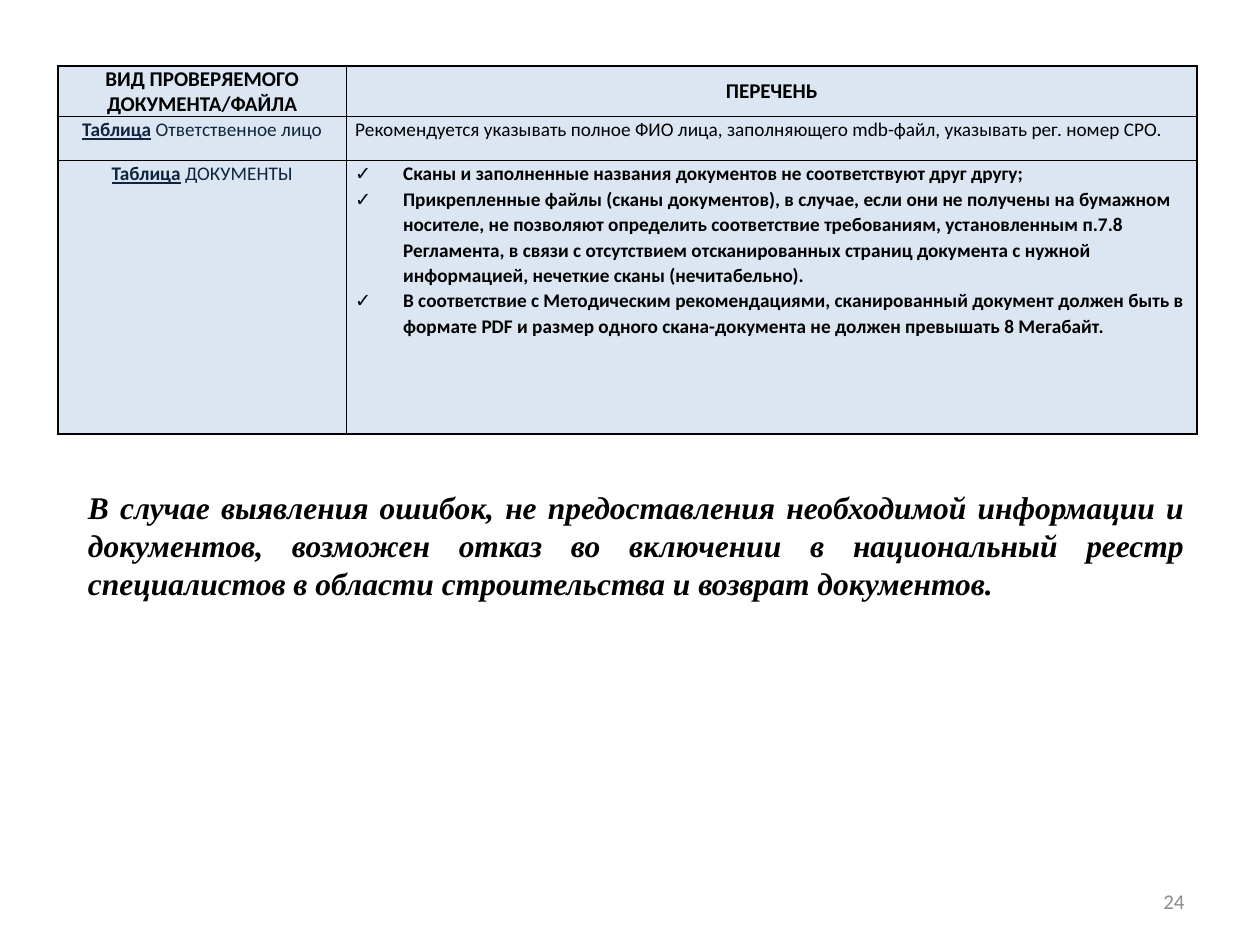
from dataclasses import dataclass

from lxml.etree import SubElement
from pptx import Presentation
from pptx.dml.color import RGBColor
from pptx.enum.text import MSO_ANCHOR as Anchor, PP_ALIGN as Align
from pptx.oxml.ns import qn
from pptx.util import Inches, Pt

BLACK, NAVY, GREY, PALE = "000000", "0F243E", "8C8C8C", "DCE6F2"
SLIDE_W, SLIDE_H = 10, 7.5
COLUMNS = (2.29, 6.75)
ROWS = (0.4, 0.35, 2.17)
BULLET_INDENT = 0.38


@dataclass(frozen=True)
class Run:
    text: str
    size: float = 11
    color: str = BLACK
    bold: bool = False
    italic: bool = False
    underline: bool = False
    font: str = "Calibri"


@dataclass(frozen=True)
class Para:
    runs: tuple[Run, ...]
    align: Align = Align.LEFT
    spacing: float = 1.07
    bullet: str = ""


@dataclass(frozen=True)
class Cell:
    paras: tuple[Para, ...]
    anchor: Anchor = Anchor.TOP
    side_margin: float = 0.07


def rgb(color: str) -> RGBColor:
    return RGBColor.from_string(color)


def add_bullet(p, char: str) -> None:
    pPr = p._p.get_or_add_pPr()
    pPr.set("marL", str(Inches(BULLET_INDENT)))
    pPr.set("indent", str(-Inches(BULLET_INDENT)))
    SubElement(pPr, qn("a:buFont"), typeface="Wingdings" if char == "ü" else "Calibri")
    SubElement(pPr, qn("a:buChar"), char=char)


def write(tf, paras: tuple[Para, ...]) -> None:
    tf.word_wrap = True
    for i, para in enumerate(paras):
        p = tf.paragraphs[0] if i == 0 else tf.add_paragraph()
        p.alignment = para.align
        p.line_spacing = para.spacing
        if para.bullet:
            add_bullet(p, para.bullet)
        for run in para.runs:
            r = p.add_run()
            r.text = run.text
            font = r.font
            font.name, font.size = run.font, Pt(run.size)
            font.bold, font.italic, font.underline = run.bold, run.italic, run.underline
            font.color.rgb = rgb(run.color)


def add_text(slide, left: float, top: float, width: float, height: float,
             para: Para, anchor: Anchor = Anchor.TOP) -> None:
    """Place one paragraph; lengths are shares of the slide's size."""
    box = slide.shapes.add_textbox(
        Inches(left * SLIDE_W), Inches(top * SLIDE_H),
        Inches(width * SLIDE_W), Inches(height * SLIDE_H))
    box.text_frame.vertical_anchor = anchor
    write(box.text_frame, (para,))


def add_borders(cell, color: str, width: float) -> None:
    tcPr = cell._tc.get_or_add_tcPr()
    for side in ("lnL", "lnR", "lnT", "lnB"):
        ln = SubElement(tcPr, qn(f"a:{side}"), w=str(Pt(width)))
        fill = SubElement(ln, qn("a:solidFill"))
        SubElement(fill, qn("a:srgbClr"), val=color)


def fill_cell(cell, content: Cell) -> None:
    cell.margin_left = cell.margin_right = Inches(content.side_margin)
    cell.margin_top = cell.margin_bottom = 0
    cell.vertical_anchor = content.anchor
    add_borders(cell, BLACK, 1)
    cell.fill.solid()
    cell.fill.fore_color.rgb = rgb(PALE)
    write(cell.text_frame, content.paras)


def add_grid(slide, left: float, top: float, cells: list[list[Cell]]) -> None:
    table = slide.shapes.add_table(
        len(ROWS), len(COLUMNS), Inches(left * SLIDE_W), Inches(top * SLIDE_H),
        Inches(sum(COLUMNS)), Inches(sum(ROWS))).table
    table.first_row = table.horz_banding = False
    for column, width in zip(table.columns, COLUMNS):
        column.width = Inches(width)
    for row, height, contents in zip(table.rows, ROWS, cells):
        row.height = Inches(height)
        for cell, content in zip(row.cells, contents):
            fill_cell(cell, content)


def header(text: str) -> Cell:
    para = Para((Run(text, 12, bold=True),), Align.CENTER, 1.0)
    return Cell((para,), Anchor.MIDDLE, 0)


def table_name(name: str) -> Cell:
    runs = (Run("Таблица", color=NAVY, bold=True, underline=True),
            Run(" ", color=NAVY, bold=True), Run(name, color=NAVY))
    return Cell((Para(runs, Align.CENTER),))


REMARKS = (
    "Сканы и заполненные названия документов не соответствуют друг другу;",
    "Прикрепленные файлы (сканы документов), в случае, если они не получены на бумажном "
    "носителе, не позволяют определить соответствие требованиям, установленным п.7.8 "
    "Регламента, в связи с отсутствием отсканированных страниц документа с нужной "
    "информацией, нечеткие сканы (нечитабельно).",
    "В соответствие с Методическим рекомендациями, сканированный документ должен быть в "
    "формате PDF и размер одного скана-документа не должен превышать 8 Мегабайт.",
)
ADVICE = ("Рекомендуется указывать полное ФИО лица, заполняющего mdb-файл, "
          "указывать рег. номер СРО.")
WARNING = ("В случае выявления ошибок, не предоставления необходимой информации и "
           "документов, возможен отказ во включении в национальный реестр специалистов "
           "в области строительства и возврат документов.")
CELLS = [
    [header("ВИД ПРОВЕРЯЕМОГО ДОКУМЕНТА/ФАЙЛА"), header("ПЕРЕЧЕНЬ")],
    [table_name("Ответственное лицо"), Cell((Para((Run(ADVICE),)),))],
    [table_name("ДОКУМЕНТЫ"),
     Cell(tuple(Para((Run(text, bold=True),), bullet="✓") for text in REMARKS))],
]


def main() -> None:
    prs = Presentation()
    prs.slide_width, prs.slide_height = Inches(SLIDE_W), Inches(SLIDE_H)
    s = prs.slides.add_slide(prs.slide_layouts[6])
    add_text(s, 0.717, 0.927, 0.233, 0.053,
             Para((Run("24", 12, GREY),), Align.RIGHT, 1.0), Anchor.MIDDLE)
    warning = Run(WARNING, 18, bold=True, italic=True, font="Times New Roman")
    add_text(s, 0.06, 0.51, 0.89, 0.135, Para((warning,), Align.JUSTIFY, 1.0))
    add_grid(s, 0.046, 0.07, CELLS)
    prs.save("out.pptx")


if __name__ == "__main__":
    main()
